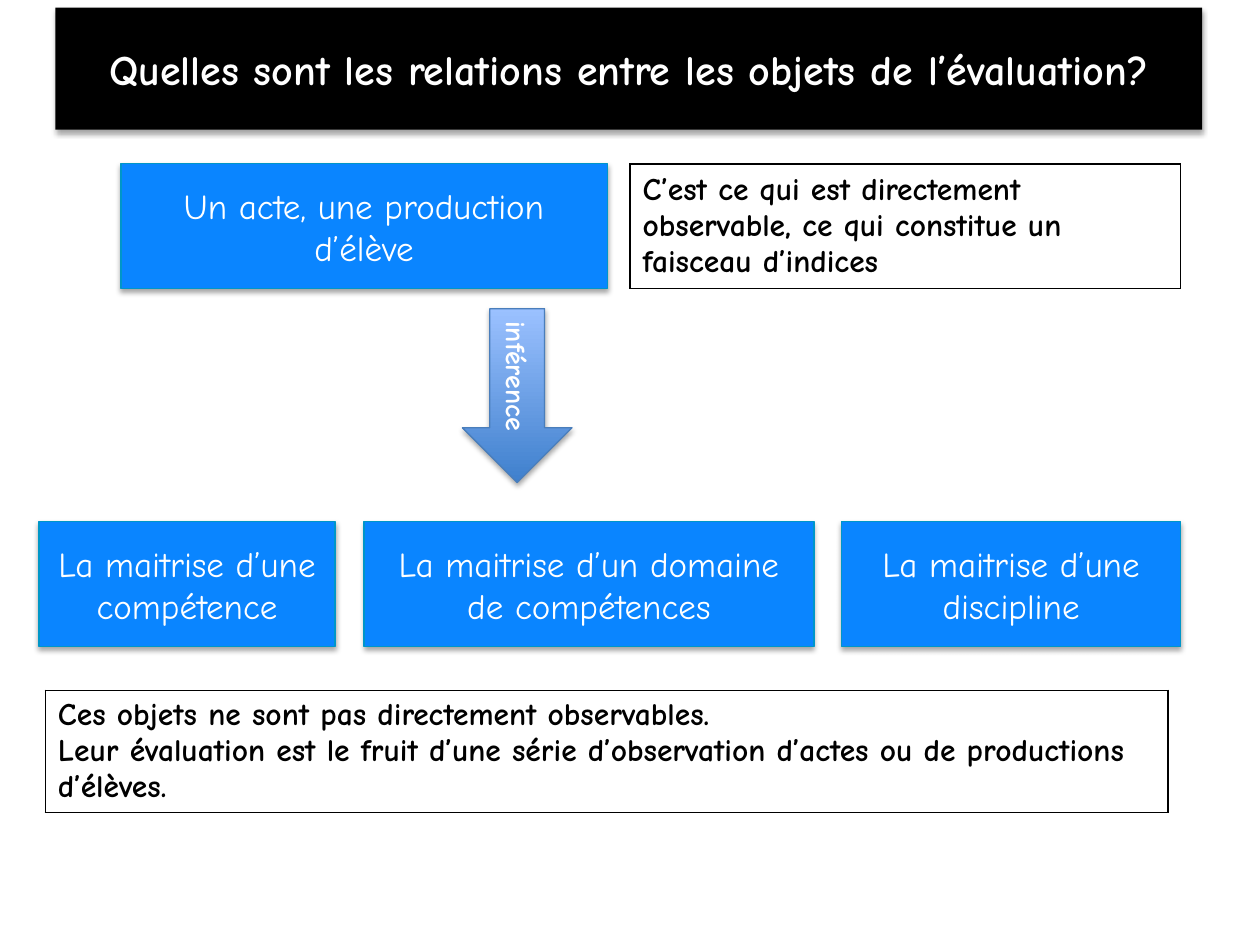
from lxml import etree
from pptx import Presentation
from pptx.dml.color import RGBColor
from pptx.enum import shapes, text
from pptx.oxml import parse_xml
from pptx.oxml.ns import nsdecls, qn
from pptx.util import Inches, Pt

FONT = "Comic Neue"
HUE = dict(blue="0A85FF", edge="0096C8", black="000000", white="FFFFFF",
           deep="3F80CD", pale="9BC1FF", rim="4A7EBB")
TITLE = "Quelles sont les relations entre les objets de l’évaluation?"
ARROW = "inférence"
BOXES = [
    ("Un acte, une production d’élève", 0.96, 1.3, 3.86),
    ("La maitrise d’une compétence", 0.31, 4.14, 2.35),
    ("La maitrise d’un domaine de compétences", 2.89, 4.14, 3.57),
    ("La maitrise d’une discipline", 6.68, 4.14, 2.69),
]
NOTES = [
    (["C’est ce qui est directement observable, ce qui constitue un faisceau d’indices"],
     (5, 1.3, 4.37, 0.99), text.MSO_ANCHOR.MIDDLE),
    (["Ces objets ne sont pas directement observables.",
      "Leur évaluation est le fruit d’une série d’observation d’actes ou de productions d’élèves."],
     (0.36, 5.48, 8.91, 0.97), text.MSO_ANCHOR.TOP),
]


def rgb(name):
    return RGBColor.from_string(HUE[name])


def write(frame, lines, size, hue, bold, align):
    frame.text = "\n".join(lines)
    for par in frame.paragraphs:
        par.alignment = align
        font = par.font
        font.name, font.size, font.bold = FONT, Pt(size), bold
        font.color.rgb = rgb(hue)


def label(shape, words, size, bold):
    frame = shape.text_frame
    frame.word_wrap = True
    frame.vertical_anchor = text.MSO_ANCHOR.MIDDLE
    write(frame, [words], size, "white", bold, text.PP_ALIGN.CENTER)


def paint(shape, fill):
    shape.fill.solid()
    shape.fill.fore_color.rgb = rgb(fill)


def edge(shape, hue):
    shape.line.color.rgb = rgb(hue)
    shape.line.width = Pt(0.75)


def shade(shape):
    shape.shadow.inherit = False
    shape._element.spPr.find(qn("a:effectLst")).append(parse_xml(
        f'<a:outerShdw {nsdecls("a")} blurRad="{Pt(3.1)}" dist="{Pt(1.8)}" '
        f'dir="5400000" rotWithShape="0"><a:srgbClr val="{HUE["black"]}">'
        '<a:alpha val="35000"/></a:srgbClr></a:outerShdw>'))


def frame_cell(cell):
    cell.fill.background()
    props = cell._tc.get_or_add_tcPr()
    for spot, side in enumerate("LRTB"):
        props.insert(spot, parse_xml(
            f'<a:ln{side} {nsdecls("a")} w="{Pt(1)}"><a:solidFill>'
            f'<a:srgbClr val="{HUE["black"]}"/></a:solidFill></a:ln{side}>'))


def add_note(slide, lines, place, anchor):
    table = slide.shapes.add_table(1, 1, *map(Inches, place)).table
    table.first_row = table.horz_banding = False
    cell = table.cell(0, 0)
    cell.vertical_anchor = anchor
    write(cell.text_frame, lines, 18, "black", True, text.PP_ALIGN.LEFT)
    frame_cell(cell)


def add_arrow(slide):
    arrow = slide.shapes.add_shape(shapes.MSO_SHAPE.DOWN_ARROW,
                                   *map(Inches, (3.67, 2.45, 0.87, 1.38)))
    arrow.fill.gradient()
    arrow.fill.gradient_angle = 90
    for stop, hue in zip(arrow.fill.gradient_stops, ("deep", "pale")):
        stop.color.rgb = rgb(hue)
    edge(arrow, "rim")
    shade(arrow)
    label(arrow, ARROW, 16, True)
    arrow.text_frame._txBody.bodyPr.set("vert", "eaVert")


def main():
    deck = Presentation()
    deck.slide_width, deck.slide_height = Inches(10), Inches(7.5)
    slide = deck.slides.add_slide(deck.slide_layouts[5])

    title = slide.shapes.title
    title.left, title.top, title.width, title.height = map(Inches, (0.44, 0.06, 9.1, 0.97))
    paint(title, "black")
    shade(title)
    label(title, TITLE, 24, True)

    for words, left, top, width in BOXES:
        box = slide.shapes.add_shape(shapes.MSO_SHAPE.RECTANGLE,
                                     *map(Inches, (left, top, width, 0.99)))
        paint(box, "blue")
        edge(box, "edge")
        shade(box)
        label(box, words, 20, False)

    for note in NOTES:
        add_note(slide, *note)
    add_arrow(slide)
    deck.save("out.pptx")


if __name__ == "__main__":
    main()
